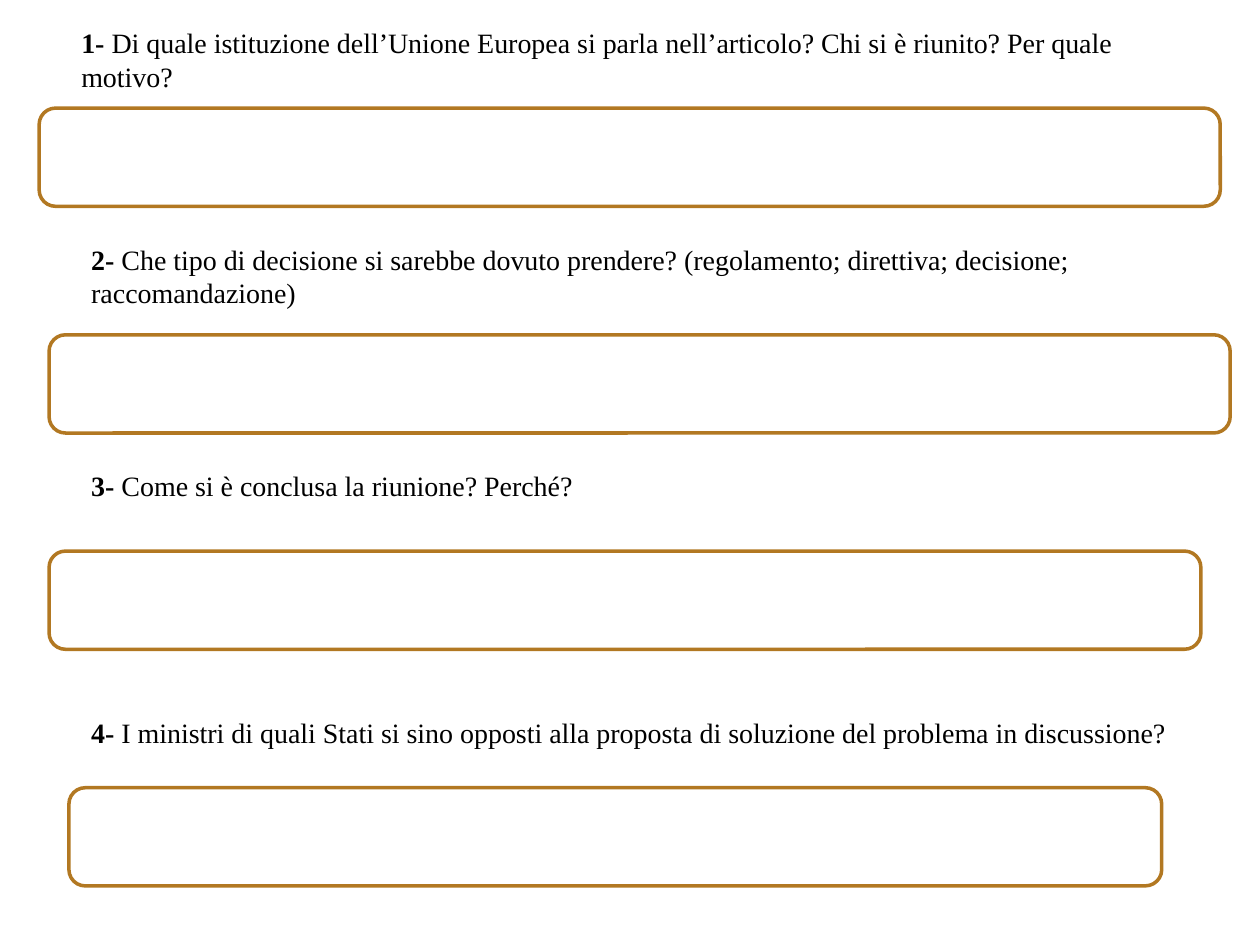
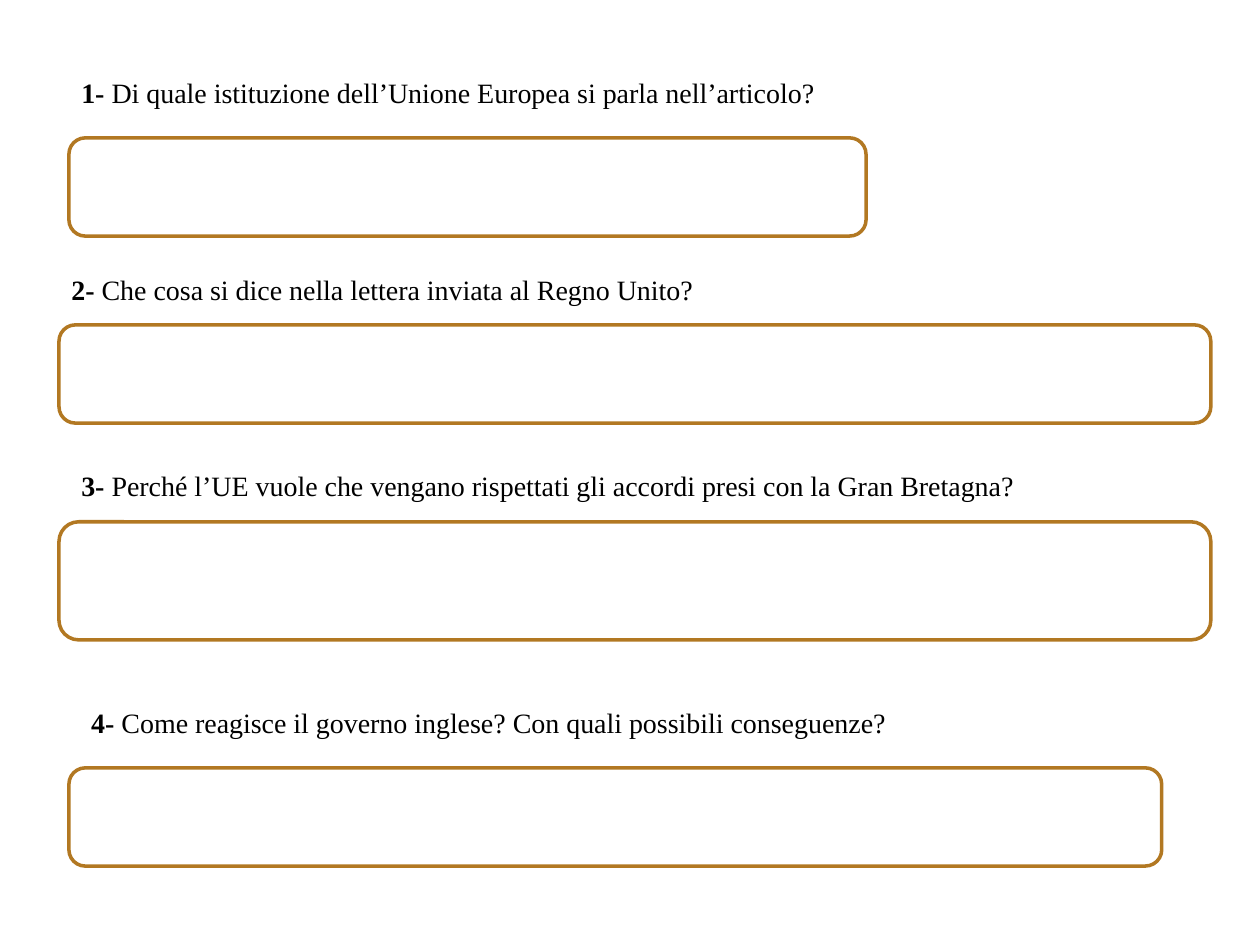
from pptx import Presentation
from pptx.dml.color import RGBColor
from pptx.enum.shapes import MSO_SHAPE
from pptx.enum.text import MSO_AUTO_SIZE
from pptx.util import Cm, Pt

# Shared style
BLACK = RGBColor(0x00, 0x00, 0x00)
WHITE = RGBColor(0xFF, 0xFF, 0xFF)
OCHRE = RGBColor(0xB2, 0x78, 0x22)
FONT = "Times New Roman"
TEXT_WIDTH = 23.02
ONE_LINE, TWO_LINES = 0.94, 1.63
BOX_HEIGHT = 1.98

# Each item: question, its (left, top, width, height), answer box likewise, in cm
COUNCIL = [
    ("Di quale istituzione dell’Unione Europea si parla nell’articolo? "
     "Chi si è riunito? Per quale motivo?",
     (1.39, 0.4, TEXT_WIDTH, TWO_LINES), (0.79, 2.18, 23.81, BOX_HEIGHT)),
    ("Che tipo di decisione si sarebbe dovuto prendere? "
     "(regolamento; direttiva; decisione; raccomandazione)",
     (1.59, 4.76, 22.62, TWO_LINES), (0.99, 6.75, 23.81, BOX_HEIGHT)),
    ("Come si è conclusa la riunione? Perché?",
     (1.59, 9.33, TEXT_WIDTH, ONE_LINE), (0.99, 11.11, 23.22, BOX_HEIGHT)),
    ("I ministri di quali Stati si sino opposti alla proposta di soluzione "
     "del problema in discussione?",
     (1.59, 14.29, TEXT_WIDTH, ONE_LINE), (1.39, 15.88, 22.03, BOX_HEIGHT)),
]
LETTER = [
    ("Di quale istituzione dell’Unione Europea si parla nell’articolo?",
     (1.39, 1.39, TEXT_WIDTH, ONE_LINE), (1.39, 2.78, 16.07, BOX_HEIGHT)),
    ("Che cosa si dice nella lettera inviata al Regno Unito?",
     (1.19, 5.36, TEXT_WIDTH, ONE_LINE), (1.19, 6.55, 23.22, BOX_HEIGHT)),
    ("Perché l’UE vuole che vengano rispettati gli accordi presi con la "
     "Gran Bretagna?",
     (1.39, 9.33, TEXT_WIDTH, ONE_LINE), (1.19, 10.52, 23.22, 2.38)),
    ("Come reagisce il governo inglese? Con quali possibili conseguenze?",
     (1.59, 14.09, TEXT_WIDTH, ONE_LINE), (1.39, 15.48, 22.03, BOX_HEIGHT)),
]


def add_box(slide, place):
    """Empty rounded frame for the answer."""
    box = slide.shapes.add_shape(MSO_SHAPE.ROUNDED_RECTANGLE, *map(Cm, place))
    box.shadow.inherit = False
    box.fill.solid()
    box.fill.fore_color.rgb = WHITE
    box.line.color.rgb = OCHRE
    box.line.width = Pt(2)


def add_question(slide, number, text, place):
    """Question with a bold number."""
    frame = slide.shapes.add_textbox(*map(Cm, place)).text_frame
    frame.word_wrap = True
    frame.auto_size = MSO_AUTO_SIZE.SHAPE_TO_FIT_TEXT
    line = frame.paragraphs[0]
    line.font.name = FONT
    line.font.size = Pt(16)
    line.font.color.rgb = BLACK
    label = line.add_run()
    label.text = f"{number}- "
    label.font.bold = True
    line.add_run().text = text


def add_sheet(deck, items):
    """One slide of numbered questions and answer boxes."""
    slide = deck.slides.add_slide(deck.slide_layouts[6])
    slide.background.fill.solid()
    slide.background.fill.fore_color.rgb = WHITE
    for number, (text, place, box) in enumerate(items, 1):
        add_question(slide, number, text, place)
        add_box(slide, box)


def main():
    deck = Presentation()
    deck.slide_width, deck.slide_height = Cm(25.4), Cm(19.05)
    for items in (COUNCIL, LETTER):
        add_sheet(deck, items)
    deck.save("out.pptx")


if __name__ == "__main__":
    main()
